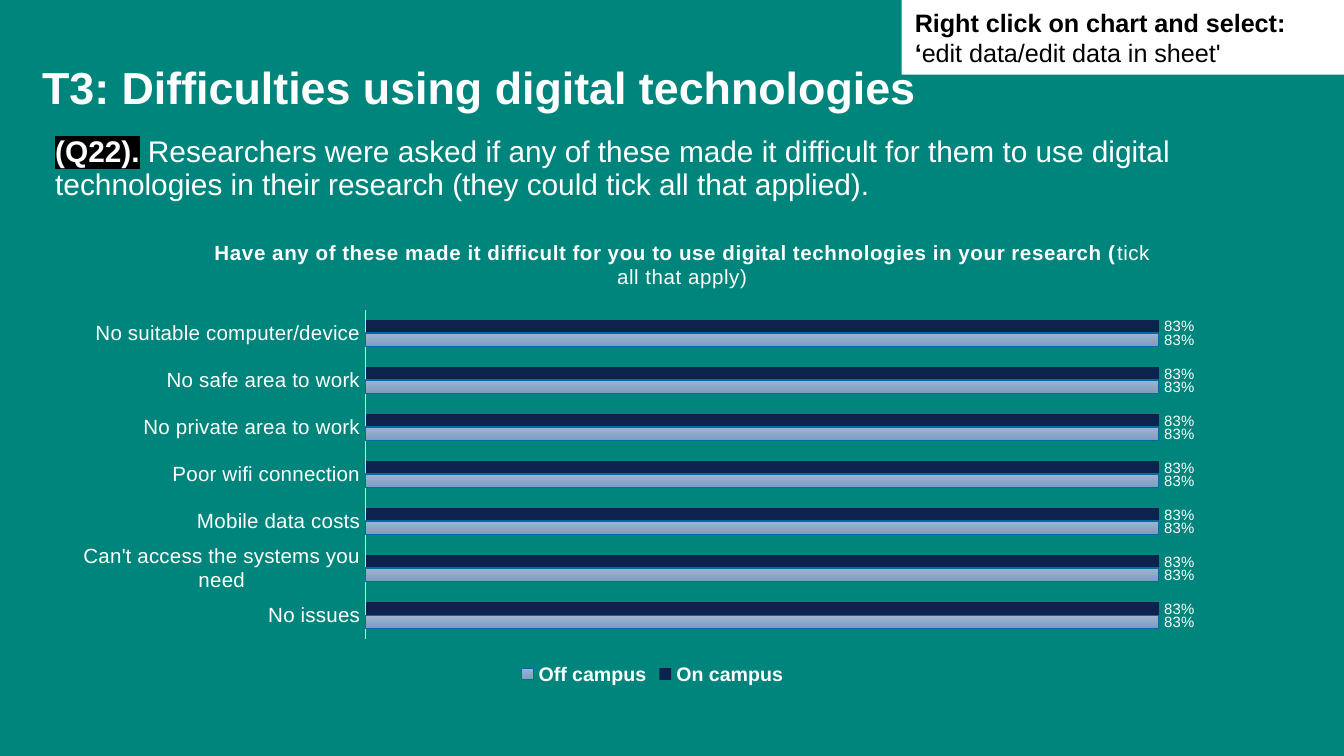
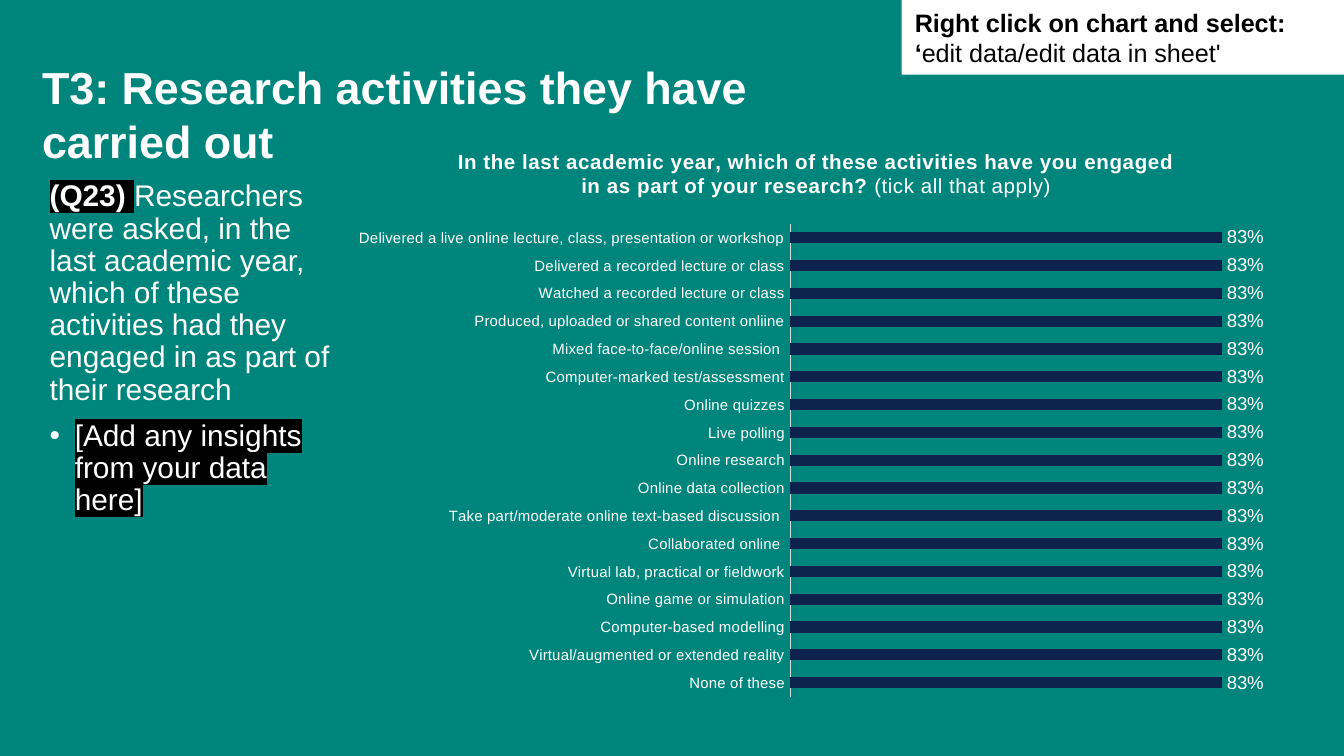
"""Build two survey slides with bar charts on difficulties and research activities."""
from lxml.etree import SubElement
from pptx import Presentation
from pptx.chart.data import CategoryChartData
from pptx.dml.color import RGBColor
from pptx.enum.chart import XL_CHART_TYPE, XL_LABEL_POSITION, XL_LEGEND_POSITION, XL_TICK_LABEL_POSITION, XL_TICK_MARK
from pptx.enum.shapes import MSO_SHAPE
from pptx.enum.text import MSO_ANCHOR, PP_ALIGN
from pptx.oxml import parse_xml
from pptx.oxml.ns import nsdecls, qn
from pptx.util import Pt

TEAL = RGBColor(0x00, 0x85, 0x7D)
WHITE = RGBColor(0xFF, 0xFF, 0xFF)
BLACK = RGBColor(0x00, 0x00, 0x00)
NAVY = RGBColor(0x0D, 0x22, 0x4C)
GREY = RGBColor(0xD9, 0xD9, 0xD9)
BLUE = RGBColor(0x00, 0x6C, 0xA1)
PALE = RGBColor(0x9D, 0xB5, 0xD2)
STEEL = RGBColor(0x7C, 0x9C, 0xC0)

SHARE = 0.83
TITLE = {"size": Pt(24), "bold": True, "color": WHITE}
BODY = {"size": Pt(16), "bold": False, "color": WHITE}
MARK = {**BODY, "highlight": BLACK}
QUESTION = {**MARK, "bold": True}
HINT = {"size": Pt(13.5), "bold": False, "color": BLACK}
HEADING = {"size": Pt(11), "bold": True, "color": WHITE, "spacing": 20}

HINT_RUNS = [("Right click on chart and select: ‘", {**HINT, "bold": True}),
             ("edit data/edit data in sheet'", HINT)]

SLIDES = [
    {
        "title": "T3: Difficulties using digital technologies",
        "title_width": 513.5,
        "body_box": (22.5, 70, 647, 44),
        "body": [[("(Q22).", QUESTION),
                  (" Researchers were asked if any of these made it difficult for them to use digital "
                   "technologies in their research (they could tick all that applied).", BODY)]],
        "chart_box": (29.5, 118, 640, 252),
        "heading": ("Have any of these made it difficult for you to use digital technologies "
                    "in your research (", "tick all that apply)"),
        "heading_at": (0.13, 0.03),
        "plot_at": (0.26, 0.19, 0.72, 0.7),
        "category_size": 11,
        "label_size": 8,
        "series": ["On campus", "Off campus"],
        "categories": ["No suitable computer/device", "No safe area to work", "No private area to work",
                       "Poor wifi connection", "Mobile data costs", "Can't access the systems you need",
                       "No issues"],
    },
    {
        "title": "T3: Research activities they have carried out",
        "title_width": 433.5,
        "body_box": (19.5, 93.5, 170, 285),
        "body": [[("(Q23) ", QUESTION),
                  ("Researchers were asked, in the last academic year, which of these activities "
                   "had they engaged in as part of their research", BODY)],
                 [("[Add any insights from your data here]", MARK)]],
        "chart_box": (183, 70.5, 501, 309),
        "heading": ("In the last academic year, which of these activities have you engaged in "
                    "as part of your research? ", "(tick all that apply)"),
        "heading_at": (0.12, 0.02),
        "plot_at": (0.48, 0.16, 0.5, 0.82),
        "category_size": 8,
        "label_size": 10,
        "series": ["Series 1"],
        "categories": ["Delivered a live online lecture, class, presentation or workshop",
                       "Delivered a recorded lecture or class", "Watched a recorded lecture or class",
                       "Produced, uploaded or shared content onliine", "Mixed face-to-face/online session ",
                       "Computer-marked test/assessment", "Online quizzes", "Live polling",
                       "Online research", "Online data collection",
                       "Take part/moderate online text-based discussion ", "Collaborated online ",
                       "Virtual lab, practical or fieldwork", "Online game or simulation",
                       "Computer-based modelling", "Virtual/augmented or extended reality",
                       "None of these"],
    },
]


def set_font(font, size, color, bold=False):
    for name, value in {"name": "Arial", "size": size, "bold": bold}.items():
        setattr(font, name, value)
    font.color.rgb = color


def add_runs(p, runs):
    for text, style in runs:
        r = p.add_run()
        r.text = text
        set_font(r.font, style["size"], style["color"], style["bold"])
        rPr = r._r.get_or_add_rPr()
        if "spacing" in style:
            rPr.set("spc", str(style["spacing"]))
        if "highlight" in style:
            mark = parse_xml(f'<a:highlight {nsdecls("a")}><a:srgbClr val="{style["highlight"]}"/></a:highlight>')
            rPr.find(qn("a:solidFill")).addnext(mark)


def add_text(slide, box, paragraphs, inset=(7.2, 3.6), line_spacing=1.0):
    tf = slide.shapes.add_textbox(*map(Pt, box)).text_frame
    tf.word_wrap = True
    tf.margin_left = tf.margin_right = Pt(inset[0])
    tf.margin_top = tf.margin_bottom = Pt(inset[1])
    for i, runs in enumerate(paragraphs):
        p = tf.add_paragraph() if i else tf.paragraphs[0]
        p.line_spacing = line_spacing
        if i:
            p.space_before = Pt(7.5)
            pPr = p._p.get_or_add_pPr()
            pPr.set("marL", str(Pt(13.5)))
            pPr.set("indent", str(-Pt(13.5)))
            SubElement(pPr, qn("a:buFont")).set("typeface", "Arial")
            SubElement(pPr, qn("a:buChar")).set("char", "•")
        add_runs(p, runs)


def add_hint(slide):
    sp = slide.shapes.add_shape(MSO_SHAPE.RECTANGLE, Pt(483), 0, Pt(237), Pt(40))
    sp.shadow.inherit = False
    sp.fill.solid()
    sp.fill.fore_color.rgb = WHITE
    sp.line.fill.background()
    tf = sp.text_frame
    tf.word_wrap = True
    tf.vertical_anchor = MSO_ANCHOR.MIDDLE
    tf.paragraphs[0].alignment = PP_ALIGN.LEFT
    add_runs(tf.paragraphs[0], HINT_RUNS)


def make_layout(place, inner=False):
    target = '<c:layoutTarget val="inner"/>' if inner else ""
    modes = "".join(f'<c:{k}Mode val="edge"/>' for k in "xy")
    sizes = "".join(f'<c:{k} val="{v}"/>' for k, v in zip("xywh", place))
    return parse_xml(f'<c:layout {nsdecls("c")}><c:manualLayout>{target}{modes}{sizes}'
                     '</c:manualLayout></c:layout>')


def drop_layout(element):
    for old in element.findall(qn("c:layout")):
        element.remove(old)


def style_axes(chart, size):
    axis = chart.category_axis
    for name, value in {"reverse_order": True, "major_tick_mark": XL_TICK_MARK.NONE,
                        "minor_tick_mark": XL_TICK_MARK.NONE, "has_major_gridlines": False,
                        "tick_label_position": XL_TICK_LABEL_POSITION.NEXT_TO_AXIS}.items():
        setattr(axis, name, value)
    set_font(axis.tick_labels.font, Pt(size), WHITE)
    axis.format.line.color.rgb = GREY
    axis.format.line.width = Pt(0.75)
    for name, value in {"visible": False, "has_major_gridlines": False,
                        "minimum_scale": 0, "maximum_scale": 0.9}.items():
        setattr(chart.value_axis, name, value)


def style_series(series, index, label_size):
    fill = series.format.fill
    if index:
        fill.gradient()
        fill.gradient_angle = 270
        for stop, color in zip(fill.gradient_stops, (PALE, STEEL)):
            stop.color.rgb = color
        series.format.line.color.rgb = BLUE
        series.format.line.width = Pt(0.75)
    else:
        fill.solid()
        fill.fore_color.rgb = NAVY
    labels = series.data_labels
    for name, value in {"show_value": True, "number_format": "0%", "number_format_is_linked": False,
                        "position": XL_LABEL_POSITION.OUTSIDE_END}.items():
        setattr(labels, name, value)
    set_font(labels.font, Pt(label_size), WHITE)


def add_bars(slide, content):
    data = CategoryChartData(number_format="0%")
    data.categories = content["categories"]
    for name in content["series"]:
        data.add_series(name, [SHARE] * len(content["categories"]))
    chart = slide.shapes.add_chart(XL_CHART_TYPE.BAR_CLUSTERED, *map(Pt, content["chart_box"]), data).chart
    set_font(chart.font, Pt(10), BLACK)

    bold, plain = content["heading"]
    chart.has_title = True
    add_runs(chart.chart_title.text_frame.paragraphs[0],
             [(bold, HEADING), (plain, {**HEADING, "bold": False})])
    chart.chart_title.include_in_layout = False
    title = chart.chart_title._element
    drop_layout(title)
    title.find(qn("c:tx")).addnext(make_layout(content["heading_at"]))

    area = chart._chartSpace.find(".//" + qn("c:plotArea"))
    drop_layout(area)
    area.insert(0, make_layout(content["plot_at"], inner=True))

    plot = chart.plots[0]
    plot.gap_width = 150
    plot.vary_by_categories = False
    style_axes(chart, content["category_size"])
    for i, series in enumerate(plot.series):
        style_series(series, i, content["label_size"])

    chart.has_legend = len(content["series"]) > 1
    if chart.has_legend:
        chart.legend.position = XL_LEGEND_POSITION.BOTTOM
        chart.legend.include_in_layout = False
        set_font(chart.legend.font, Pt(10.5), WHITE, True)


def main():
    prs = Presentation()
    prs.slide_width, prs.slide_height = Pt(720), Pt(405)
    background = prs.slide_master.background.fill
    background.solid()
    background.fore_color.rgb = TEAL
    for content in SLIDES:
        slide = prs.slides.add_slide(prs.slide_layouts[6])
        add_text(slide, (22.5, 32, content["title_width"], 27), [[(content["title"], TITLE)]], inset=(0, 0))
        add_text(slide, content["body_box"], content["body"], line_spacing=0.9)
        add_bars(slide, content)
        add_hint(slide)
    prs.save("out.pptx")


if __name__ == "__main__":
    main()
